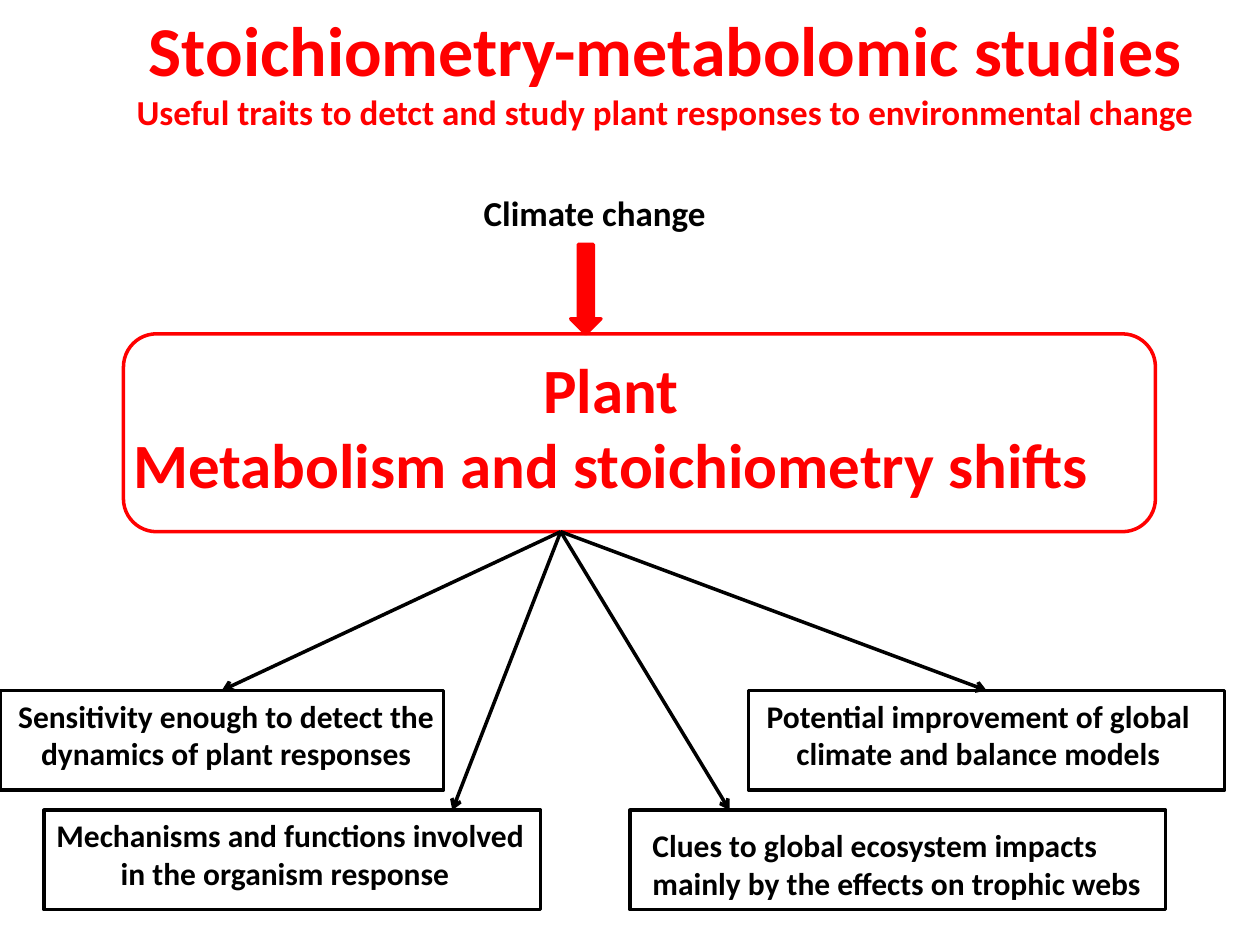
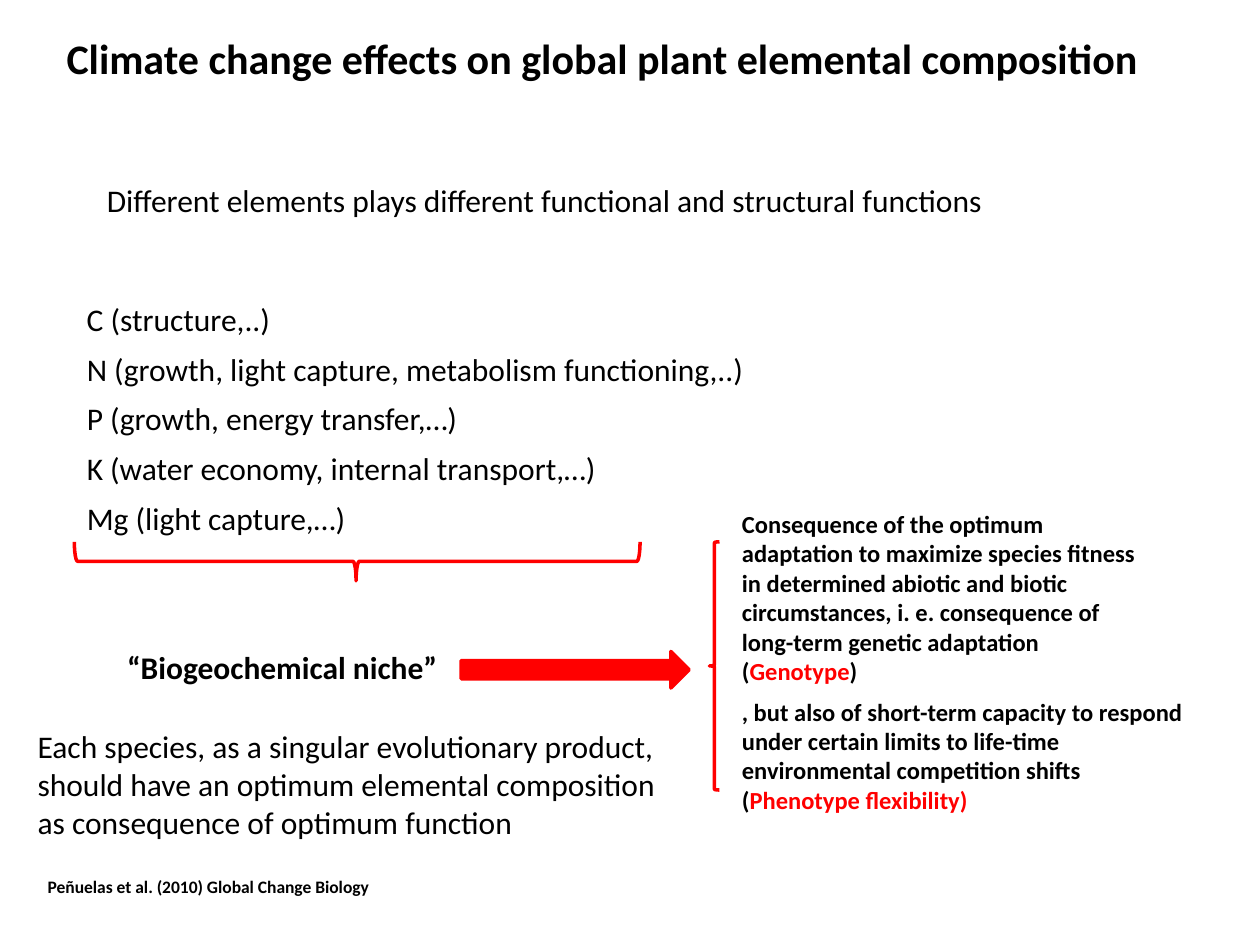
from lxml import etree
from pptx import Presentation
from pptx import util as u
from pptx.dml.color import RGBColor
from pptx.enum import shapes, text
from pptx.oxml import ns

RED = RGBColor(0xFF, 0, 0)
BLACK = RGBColor(0, 0, 0)
FONT = "Calibri"
COLS, ROWS = 100, 75
LEFT, MID = text.PP_ALIGN.LEFT, text.PP_ALIGN.CENTER
KIND = shapes.MSO_SHAPE


class Deck:
    """Style and current slide; all lengths are grid columns and rows."""

    def __init__(self):
        self.prs = Presentation()
        self.prs.slide_width, self.prs.slide_height = u.Inches(10), u.Inches(7.5)
        self.cell = self.prs.slide_width / COLS
        self.row = self.prs.slide_height / ROWS
        self.slide = None

    def page(self):
        self.slide = self.prs.slides.add_slide(self.prs.slide_layouts[6])

    def grid(self, *nums):
        """Turn alternating columns and rows into slide lengths."""
        return [round(n * (self.row if i % 2 else self.cell))
                for i, n in enumerate(nums)]

    def label(self, at, lines, size=18, bold=False, color=BLACK, align=LEFT,
              wrap=False):
        """Add text; the parts of a line between bars are red.

        A size may be one number or one for each line.
        """
        frame = self.slide.shapes.add_textbox(*self.grid(*at)).text_frame
        frame.word_wrap = wrap
        frame.auto_size = text.MSO_AUTO_SIZE.SHAPE_TO_FIT_TEXT
        sizes = size if isinstance(size, tuple) else (size,) * len(lines)
        for i, (line, pts) in enumerate(zip(lines, sizes)):
            para = frame.add_paragraph() if i else frame.paragraphs[0]
            para.alignment = align
            for j, part in enumerate(line.split("|")):
                if not part:
                    continue
                run = para.add_run()
                run.text = part
                run.font.name, run.font.size = FONT, u.Pt(pts)
                run.font.bold = bold
                run.font.color.rgb = RED if j % 2 else color
        return frame

    def shape(self, kind, at, color=RED, solid=False, turn=0):
        item = self.slide.shapes.add_shape(kind, *self.grid(*at))
        item.shadow.inherit = False
        item.rotation = turn
        if solid:
            item.fill.solid()
            item.fill.fore_color.rgb = color
        else:
            item.fill.background()
        item.line.color.rgb, item.line.width = color, u.Pt(2)
        return item

    def arrow(self, start, end):
        item = self.slide.shapes.add_connector(
            shapes.MSO_CONNECTOR.STRAIGHT, *self.grid(*start, *end))
        item.line.color.rgb, item.line.width = BLACK, u.Pt(2)
        etree.SubElement(item.line._get_or_add_ln(), ns.qn("a:tailEnd"),
                         type="arrow")
        etree.SubElement(item._element.spPr, ns.qn("a:effectLst"))


def studies(deck):
    deck.page()
    deck.label((2, 0, 101.6, 11.1),
               ["Stoichiometry-metabolomic studies",
                "Useful traits to detct and study plant responses to "
                "environmental change"],
               (40, 20), True, RED, MID, True)
    deck.label((37.4, 14.7, 19.8, 4.4), ["Climate change"], 20, True)
    deck.label((9.1, 27.3, 78.8, 13.1),
               ["Plant", "Metabolism and stoichiometry shifts"],
               36, True, RED, MID, True)
    deck.shape(KIND.ROUNDED_RECTANGLE, (9.8, 26.5, 81.9, 15.7))
    deck.shape(KIND.DOWN_ARROW, (45.3, 19.4, 2.4, 7.1), solid=True)

    high, low = 54.8, 64.3
    # frame left, top, width; text left, top, width; arrow tip; align; lines
    gains = [
        (0, high, 35.2, 0, high, 35.9, 17.6, MID,
         ["Sensitivity enough to detect the", "dynamics of plant responses"]),
        (3.5, low, 39.4, 3.5, low, 40, 35.9, LEFT,
         ["Mechanisms and functions involved", "in the organism response"]),
        (59.4, high, 37.8, 59.4, high, 36.5, 78.3, MID,
         ["Potential improvement of global", "climate and balance models"]),
        (50, low, 42.5, 50.8, 65.1, 41.2, 57.9, LEFT,
         ["Clues to global ecosystem impacts",
          "mainly by the effects on trophic webs"]),
    ]
    for left, top, width, x, y, span, tip, align, lines in gains:
        frame = deck.label((x, y, span, 7.1), lines, bold=True, align=align)
        if lines[1].startswith("in the"):
            props = frame.paragraphs[1]._p.get_or_add_pPr()
            props.set("marL", str(u.Inches(0.51)))
        deck.shape(KIND.RECTANGLE, (left, top, width, 7.9), BLACK)
        deck.arrow((44.5, 42.2), (tip, top))


def niche(deck):
    deck.page()
    deck.label((4.3, 2.1, 88, 5),
               ["Climate change effects on global plant elemental composition"],
               24, True)
    deck.label((7.5, 13.9, 71.9, 4),
               ["Different elements plays different functional and structural "
                "functions"])
    roles = [("C (structure,..)", 16.7),
             ("N (growth, light capture, metabolism functioning,..)", 55.1),
             ("P (growth, energy transfer,…)", 31.8),
             ("K (water economy, internal transport,…)", 42.9),
             ("Mg (light capture,…)", 22.8)]
    for i, (role, width) in enumerate(roles):
        deck.label((5.9, 23.3 + 3.95 * i, width, 4), [role])
    brace = deck.shape(KIND.RIGHT_BRACE, (26.8, 22.1, 3.1, 44.9), turn=90)
    brace.adjustments[1] = 0.502
    deck.label((9.1, 50.9, 26.8, 4), ["“Biogeochemical niche”"], bold=True)
    deck.shape(KIND.RIGHT_ARROW, (36.6, 51.7, 18.1, 2.9), solid=True)
    deck.shape(KIND.RIGHT_BRACE, (56.3, 43, 0.8, 19.7), turn=180)
    deck.label((2, 57.2, 51.7, 10.1),
               ["Each species, as a singular evolutionary product,",
                "should have an optimum elemental composition",
                "as consequence of optimum function"])
    deck.label((57.9, 39.9, 35.1, 15.1),
               ["Consequence of the optimum",
                "adaptation to maximize species fitness",
                "in determined abiotic and biotic",
                "circumstances, i. e. consequence of",
                "long-term genetic adaptation",
                "(|Genotype|)"], 14, True)
    deck.label((57.9, 54.8, 37.7, 10.4),
               [", but also of short-term capacity to respond",
                "under certain limits to life-time",
                "environmental competition shifts",
                "(|Phenotype flexibility)"], 14, True)
    deck.label((2.8, 69, 27.9, 2.7),
               ["Peñuelas et al. (2010) Global Change Biology"], 10, True)


def main():
    deck = Deck()
    studies(deck)
    niche(deck)
    deck.prs.save("out.pptx")


if __name__ == "__main__":
    main()
